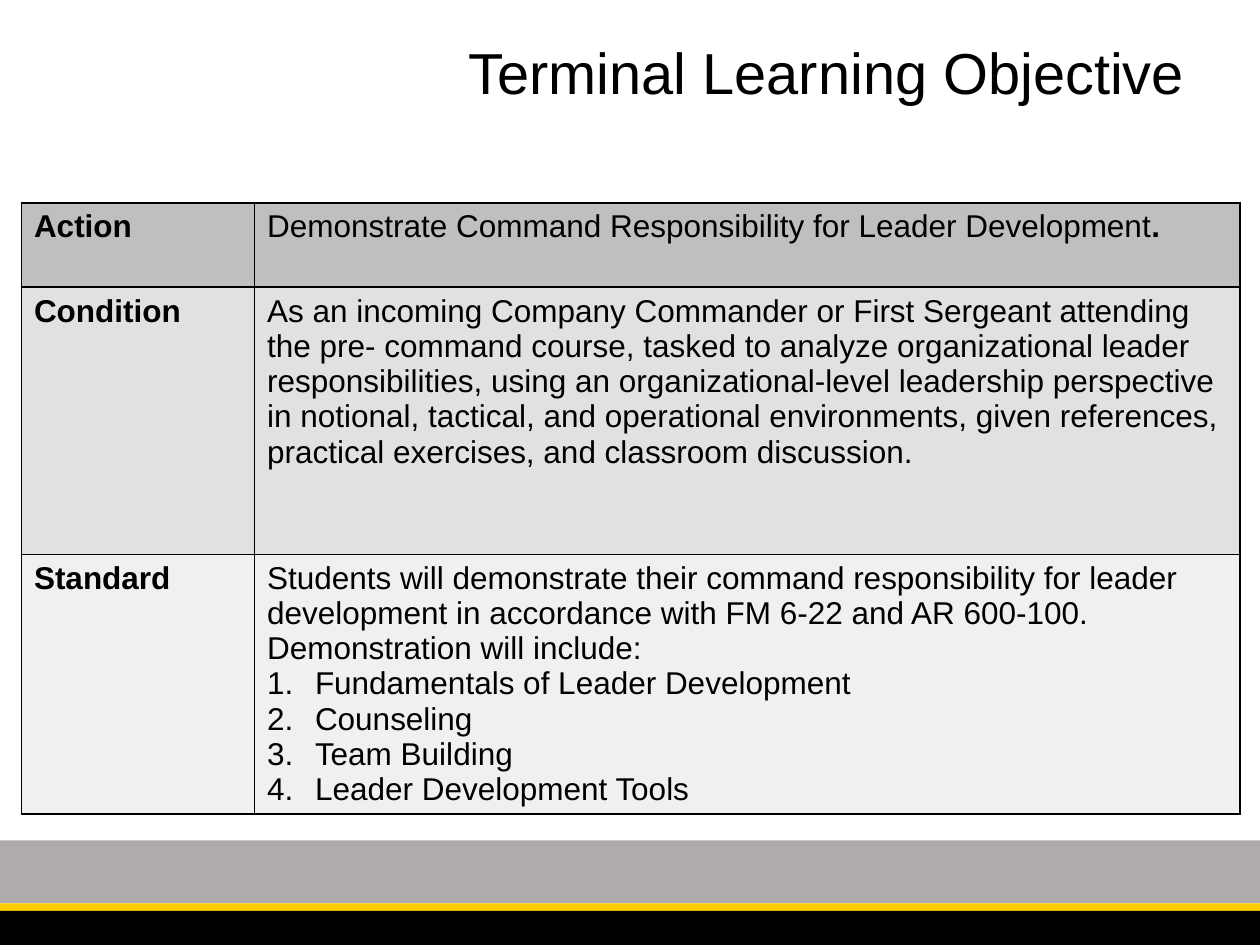
"""Build the Terminal Learning Objective slide."""
import pptx
import pptx.dml.color
import pptx.enum.shapes
import pptx.enum.text
import pptx.oxml
import pptx.oxml.ns
import pptx.util

Inches = pptx.util.Inches
Pt = pptx.util.Pt

COLORS = {"text": "000000", "border": "000000", "gray": "AFABAB", "gold": "FFCC00",
          "black": "000000", "action": "BFBFBF", "condition": "E1E1E1", "standard": "F0F0F0"}

TITLE = "Terminal Learning Objective"
OBJECTIVES = [
    {"label": "Action", "color": "action", "height": 0.67,
     "body": ["Demonstrate Command Responsibility for Leader Development"], "bold_end": "."},
    {"label": "Condition", "color": "condition", "height": 2.12,
     "body": ["As an incoming Company Commander or First Sergeant attending the pre- command "
              "course, tasked to analyze organizational leader responsibilities, using an "
              "organizational-level leadership perspective in notional, tactical, and operational "
              "environments, given references, practical exercises, and classroom discussion."]},
    {"label": "Standard", "color": "standard", "height": 1.91,
     "body": ["Students will demonstrate their command responsibility for leader development "
              "in accordance with FM 6-22 and AR 600-100.",
              "Demonstration will include:"],
     "steps": ["Fundamentals of Leader Development", "Counseling", "Team Building",
               "Leader Development Tools"]},
]
COLUMN_WIDTHS = (1.85, 7.82)
FOOTER_BANDS = [("gray", 6.67, 0.5), ("gold", 7.17, 0.06), ("black", 7.23, 0.27)]


def rgb(name):
    return pptx.dml.color.RGBColor.from_string(COLORS[name])


def write(paragraph, text, size=18, bold=False, align=None, spacing=None, numbered=False):
    if numbered:
        properties = paragraph._p.get_or_add_pPr()
        properties.set("marL", str(Inches(0.38)))
        properties.set("indent", str(-Inches(0.38)))
        numbering = pptx.oxml.ns.qn("a:buAutoNum")
        properties.append(properties.makeelement(numbering, {"type": "arabicPeriod"}))
    if align is not None:
        paragraph.alignment = align
    if spacing is not None:
        paragraph.line_spacing = spacing
    run = paragraph.add_run()
    run.text = text
    run.font.name = "Arial"
    run.font.size = Pt(size)
    run.font.bold = bold
    run.font.color.rgb = rgb("text")


def add_borders(cell):
    properties = cell._tc.get_or_add_tcPr()
    for position, side in enumerate(("lnL", "lnR", "lnT", "lnB")):
        properties.insert(position, pptx.oxml.parse_xml(
            f'<a:{side} {pptx.oxml.ns.nsdecls("a")} w="{Pt(1)}"><a:solidFill>'
            f'<a:srgbClr val="{COLORS["border"]}"/></a:solidFill></a:{side}>'))


def add_footer(slide):
    for color, top, height in FOOTER_BANDS:
        band = slide.shapes.add_shape(pptx.enum.shapes.MSO_SHAPE.RECTANGLE,
                                      0, Inches(top), Inches(10), Inches(height))
        band.shadow.inherit = False
        band.fill.solid()
        band.fill.fore_color.rgb = rgb(color)
        band.line.fill.background()


def add_title(slide):
    title = slide.shapes.title
    title.left, title.top, title.width, title.height = map(Inches, (0.5, 0.3, 9, 1.25))
    frame = title.text_frame
    frame.auto_size = pptx.enum.text.MSO_AUTO_SIZE.NONE
    frame.vertical_anchor = pptx.enum.text.MSO_ANCHOR.TOP
    write(frame.paragraphs[0], TITLE, size=33, spacing=0.9,
          align=pptx.enum.text.PP_ALIGN.RIGHT)


def add_objectives(slide):
    table = slide.shapes.add_table(
        len(OBJECTIVES), len(COLUMN_WIDTHS), Inches(0.17), Inches(1.61),
        Inches(sum(COLUMN_WIDTHS)), Inches(sum(row["height"] for row in OBJECTIVES))).table
    for column, width in zip(table.columns, COLUMN_WIDTHS):
        column.width = Inches(width)
    for row, objective in zip(table.rows, OBJECTIVES):
        row.height = Inches(objective["height"])
        for cell in row.cells:
            cell.fill.solid()
            cell.fill.fore_color.rgb = rgb(objective["color"])
            add_borders(cell)
        label, details = row.cells
        write(label.text_frame.paragraphs[0], objective["label"], bold=True)
        frame = details.text_frame
        lines = [(text, False) for text in objective["body"]]
        lines += [(text, True) for text in objective.get("steps", [])]
        for index, (text, numbered) in enumerate(lines):
            paragraph = frame.add_paragraph() if index else frame.paragraphs[0]
            write(paragraph, text, numbered=numbered)
        if "bold_end" in objective:
            write(paragraph, objective["bold_end"], bold=True)


def main():
    presentation = pptx.Presentation()
    presentation.slide_width, presentation.slide_height = Inches(10), Inches(7.5)
    slide = presentation.slides.add_slide(presentation.slide_layouts[5])
    add_footer(slide)
    add_title(slide)
    add_objectives(slide)
    presentation.save("out.pptx")


if __name__ == "__main__":
    main()
